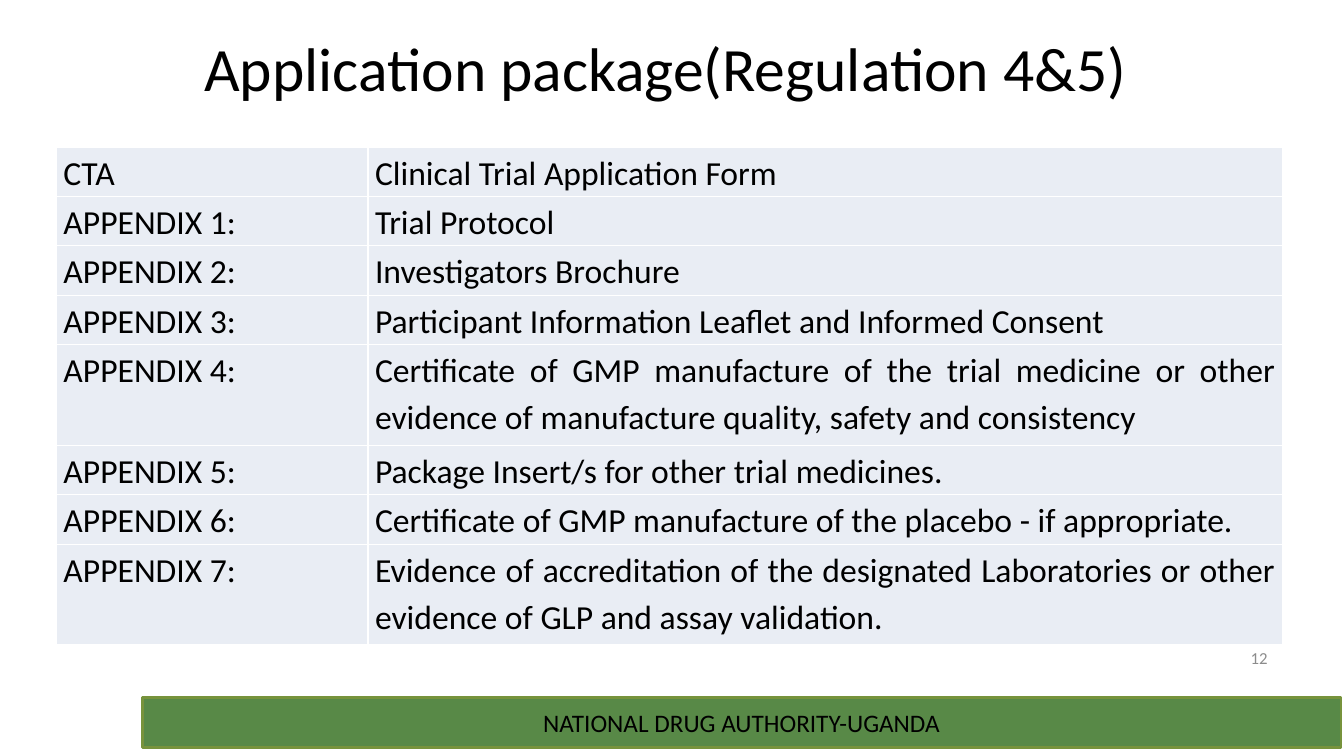
from dataclasses import dataclass

from lxml.etree import SubElement
from pptx import Presentation
from pptx.dml.color import RGBColor
from pptx.enum.shapes import MSO_SHAPE
from pptx.enum.text import MSO_ANCHOR, MSO_AUTO_SIZE, PP_ALIGN
from pptx.oxml.ns import qn
from pptx.util import Inches, Pt


@dataclass(frozen=True)
class Theme:
    font: str = "Calibri"
    text: str = "000000"
    muted: str = "8C8C8C"
    cell: str = "E9EDF4"
    border: str = "FFFFFF"
    band: str = "588947"
    band_line: str = "77933C"
    title_size: int = 44
    table_size: int = 24
    band_size: int = 18
    number_size: int = 12


THEME = Theme()

# Each row: name, content, height in inches
ROW, TALL_ROW = 0.49, 1
PACKAGE = [
    ("CTA", "Clinical Trial Application Form", ROW),
    ("APPENDIX 1:", "Trial Protocol", ROW),
    ("APPENDIX 2:", "Investigators Brochure", ROW),
    ("APPENDIX 3:", "Participant Information Leaflet and Informed Consent", ROW),
    ("APPENDIX 4:", "Certificate of GMP manufacture of the trial medicine or other "
     "evidence of manufacture quality, safety and consistency", TALL_ROW),
    ("APPENDIX 5:", "Package Insert/s for other trial medicines.", ROW),
    ("APPENDIX 6:", "Certificate of GMP manufacture of the placebo - if appropriate.", ROW),
    ("APPENDIX 7:", "Evidence of accreditation of the designated Laboratories or other "
     "evidence of GLP and assay validation.", TALL_ROW),
]


def write(tf, text, size, color=THEME.text, align=PP_ALIGN.CENTER,
          line_spacing=None, space_after=None):
    tf.word_wrap = True
    p = tf.paragraphs[0]
    p.alignment = align
    if line_spacing is not None:
        p.line_spacing = line_spacing
    if space_after is not None:
        p.space_after = Pt(space_after)
    r = p.add_run()
    r.text = text
    r.font.name = THEME.font
    r.font.size = Pt(size)
    r.font.color.rgb = RGBColor.from_string(color)


def add_band(s, x, y, w, h, text):
    sp = s.shapes.add_shape(MSO_SHAPE.RECTANGLE, Inches(x), Inches(y), Inches(w), Inches(h))
    sp.shadow.inherit = False
    sp.fill.solid()
    sp.fill.fore_color.rgb = RGBColor.from_string(THEME.band)
    sp.line.color.rgb = RGBColor.from_string(THEME.band_line)
    sp.line.width = Pt(2)
    sp.text_frame.vertical_anchor = MSO_ANCHOR.MIDDLE
    write(sp.text_frame, text, THEME.band_size)


def set_title(s, x, y, w, h, text):
    sp = s.shapes.title
    sp.left, sp.top, sp.width, sp.height = Inches(x), Inches(y), Inches(w), Inches(h)
    tf = sp.text_frame
    tf.auto_size = MSO_AUTO_SIZE.NONE
    tf.vertical_anchor = MSO_ANCHOR.MIDDLE
    write(tf, text, THEME.title_size)


def add_page_number(s, x, y, w, h, text):
    sp = s.shapes.add_textbox(Inches(x), Inches(y), Inches(w), Inches(h))
    sp.text_frame.vertical_anchor = MSO_ANCHOR.MIDDLE
    write(sp.text_frame, text, THEME.number_size, color=THEME.muted, align=PP_ALIGN.RIGHT)


def style_cell(cell):
    # Borders come before the fill in the cell properties
    tc_pr = cell._tc.get_or_add_tcPr()
    for side in ("a:lnL", "a:lnR", "a:lnT", "a:lnB"):
        ln = SubElement(tc_pr, qn(side), w=str(Pt(1)))
        SubElement(SubElement(ln, qn("a:solidFill")), qn("a:srgbClr"), val=THEME.border)
    cell.fill.solid()
    cell.fill.fore_color.rgb = RGBColor.from_string(THEME.cell)
    cell.margin_left = cell.margin_right = Inches(0.07)
    cell.margin_top = cell.margin_bottom = 0


def add_package_table(s, x, y, w, rows, name_w):
    h = sum(row[2] for row in rows)
    table = s.shapes.add_table(len(rows), 2, Inches(x), Inches(y), Inches(w), Inches(h)).table
    table.first_row = table.horz_banding = False
    table.columns[0].width = Inches(name_w)
    table.columns[1].width = Inches(w - name_w)
    for i, (name, content, height) in enumerate(rows):
        table.rows[i].height = Inches(height)
        for j, text in enumerate((name, content)):
            cell = table.cell(i, j)
            style_cell(cell)
            write(cell.text_frame, text, THEME.table_size, align=PP_ALIGN.JUSTIFY,
                  line_spacing=1.15, space_after=10)


def main():
    prs = Presentation()
    prs.slide_width, prs.slide_height = Inches(13.33), Inches(7.5)
    s = prs.slides.add_slide(prs.slide_layouts[5])
    add_band(s, 1.41, 6.92, 11.89, 0.5, "NATIONAL DRUG AUTHORITY-UGANDA")
    set_title(s, 0.44, 0.25, 12.33, 0.83, "Application package(Regulation 4&5)")
    add_page_number(s, 9.56, 6.33, 3.11, 0.4, "12")
    add_package_table(s, 0.56, 1.46, 12.16, PACKAGE, name_w=3.09)
    prs.save("out.pptx")


if __name__ == "__main__":
    main()
